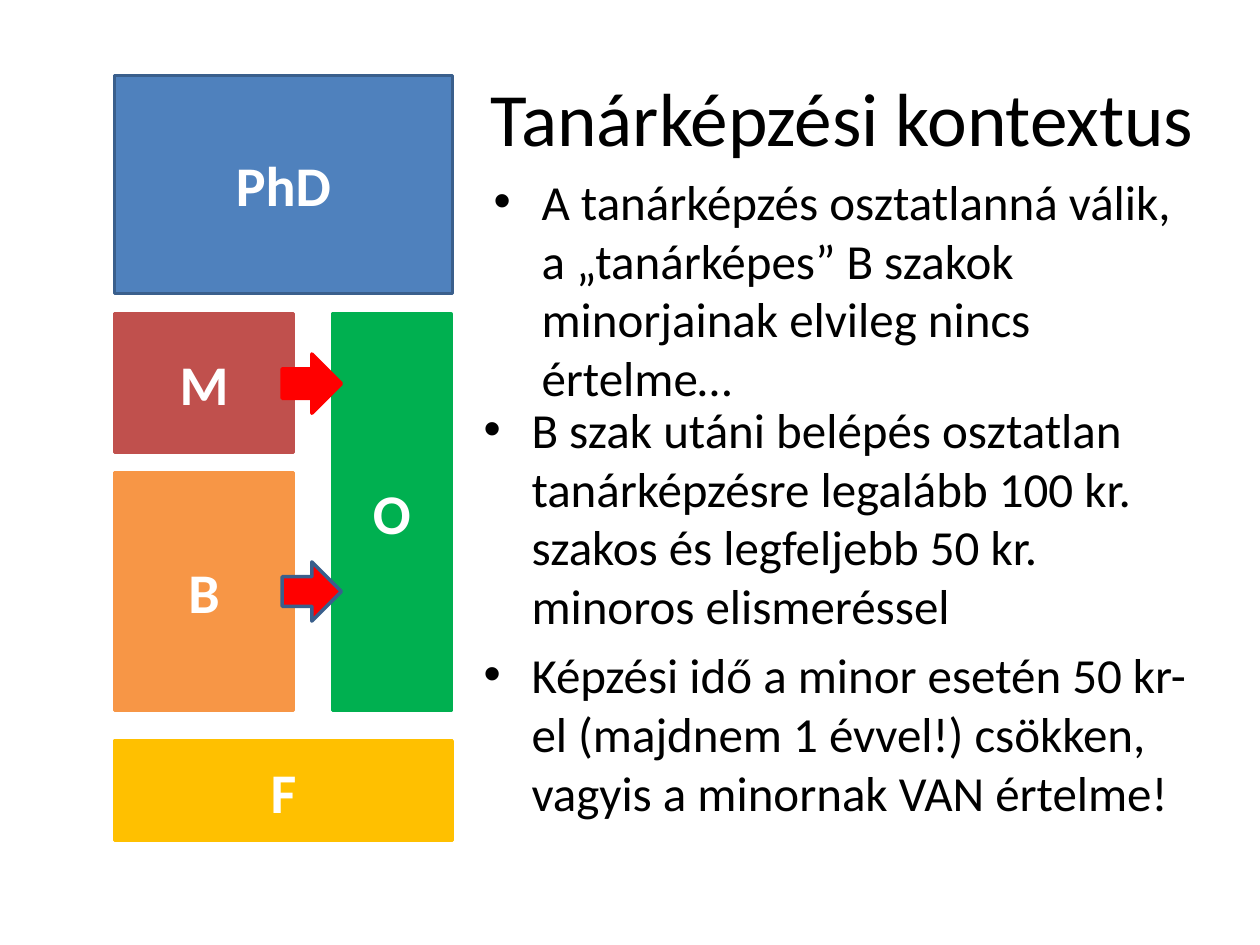
from pptx import Presentation
from pptx.dml.color import RGBColor
from pptx.enum.shapes import MSO_SHAPE
from pptx.enum.text import MSO_ANCHOR, PP_ALIGN
from pptx.oxml.ns import qn
from pptx.util import Inches, Pt
from lxml import etree

RECT, ARROW = MSO_SHAPE.RECTANGLE, MSO_SHAPE.RIGHT_ARROW
MIDDLE, TOP = MSO_ANCHOR.MIDDLE, MSO_ANCHOR.TOP
CENTER, RIGHT = PP_ALIGN.CENTER, PP_ALIGN.RIGHT

COLORS = {
    "text": "000000", "white": "FFFFFF", "blue": "4F81BD", "navy": "3A5F8C",
    "brick": "C0504D", "orange": "F79646", "green": "00B050",
    "amber": "FFC000", "red": "FF0000",
}


class SlideBuilder:
    font = "Calibri"

    def __init__(self, slide):
        self.slide = slide

    def color(self, name):
        return RGBColor.from_string(COLORS[name])

    def run(self, p, text, size, color="text", bold=False):
        r = p.add_run()
        r.text = text
        r.font.name = self.font
        r.font.size = Pt(size)
        r.font.bold = bold
        r.font.color.rgb = self.color(color)

    def title(self, text, box):
        sp = self.slide.shapes.title
        sp.left, sp.top, sp.width, sp.height = map(Inches, box)
        tf = sp.text_frame
        tf.word_wrap = True
        tf.vertical_anchor = MIDDLE
        p = tf.paragraphs[0]
        p.alignment = RIGHT
        self.run(p, text, 43)

    def shape(self, kind, box, fill, line, label=None):
        sp = self.slide.shapes.add_shape(kind, *map(Inches, box))
        sp.shadow.inherit = False
        sp.fill.solid()
        sp.fill.fore_color.rgb = self.color(fill)
        sp.line.color.rgb = self.color(line)
        sp.line.width = Pt(2)
        if label:
            tf = sp.text_frame
            tf.vertical_anchor = MIDDLE
            p = tf.paragraphs[0]
            p.alignment = CENTER
            self.run(p, label, 32, "white", bold=True)

    def bullets(self, items, box):
        tf = self.slide.shapes.add_textbox(*map(Inches, box)).text_frame
        tf.word_wrap = True
        tf.vertical_anchor = TOP
        for i, text in enumerate(items):
            p = tf.add_paragraph() if i else tf.paragraphs[0]
            p.space_before = Pt(5.6 if i else 0)
            pPr = p._p.get_or_add_pPr()
            pPr.set("marL", str(Inches(0.38)))
            pPr.set("indent", str(-Inches(0.38)))
            etree.SubElement(pPr, qn("a:buFont")).set("typeface", "Arial")
            etree.SubElement(pPr, qn("a:buChar")).set("char", "•")
            self.run(p, text, 28)


def main():
    prs = Presentation()
    prs.slide_width, prs.slide_height = Inches(10), Inches(7.5)
    s = SlideBuilder(prs.slides.add_slide(prs.slide_layouts[5]))

    # Title and first point
    s.title("Tanárképzési kontextus", (0.5, 0.3, 9.07, 1.25))
    s.bullets(["A tanárképzés osztatlanná válik, a „tanárképes” B szakok "
               "minorjainak elvileg nincs értelme…"], (3.82, 1.31, 5.68, 2.2))

    # Training levels
    left, narrow, wide = 0.91, 1.42, 2.68
    levels = [
        ("B", (left, 3.75, narrow, 1.89), "orange", "orange"),
        ("M", (left, 2.49, narrow, 1.1), "brick", "brick"),
        ("O", (2.64, 2.49, 0.94, 3.15), "green", "green"),
        ("F", (left, 5.88, wide, 0.79), "amber", "amber"),
        ("PhD", (left, 0.6, wide, 1.73), "blue", "navy"),
    ]
    for label, box, fill, line in levels:
        s.shape(RECT, box, fill, line, label)

    # Transfers into the undivided programme
    for top, line in ((2.81, "red"), (4.46, "navy")):
        s.shape(ARROW, (2.24, top, 0.47, 0.47), "red", line)

    # Remaining points
    s.bullets(["B szak utáni belépés osztatlan tanárképzésre legalább 100 kr. "
               "szakos és legfeljebb 50 kr. minoros elismeréssel",
               "Képzési idő a minor esetén 50 kr-el (majdnem 1 évvel!) "
               "csökken, vagyis a minornak VAN értelme!"],
              (3.74, 3.12, 5.92, 3.94))

    prs.save("out.pptx")


if __name__ == "__main__":
    main()
